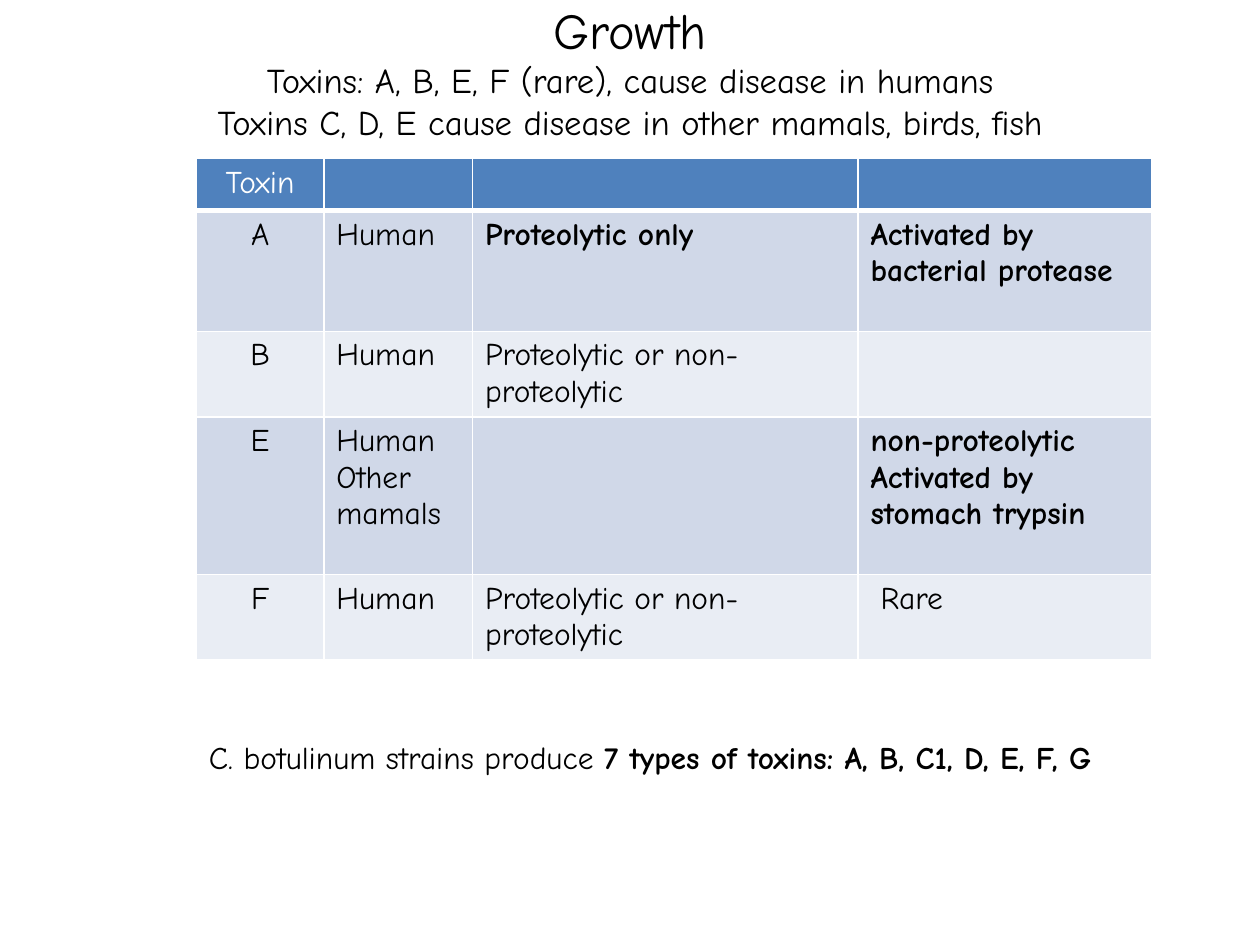
from lxml import etree
from pptx import Presentation
from pptx.dml.color import RGBColor
from pptx.enum import text
from pptx.oxml import ns
from pptx import util as u

FONT = "Comic Neue"
BLACK, WHITE = "000000", "FFFFFF"
HEADER, BAND_DARK, BAND_LIGHT = "4F81BD", "D0D8E8", "E9EDF4"


def color(hex_value):
    return RGBColor.from_string(hex_value)


class ToxinSlide:
    """Slide of 100 x 75 grid units, each a tenth of an inch."""

    def __init__(self, deck):
        self.slide = deck.slides.add_slide(deck.slide_layouts[5])

    def grid(self, *units):
        return [u.Inches(n / 10) for n in units]

    def run(self, paragraph, words, size=18, bold=False, ink=BLACK):
        run = paragraph.add_run()
        run.text = words
        run.font.name, run.font.size, run.font.bold = FONT, u.Pt(size), bold
        run.font.color.rgb = color(ink)

    def title(self, box, lines):
        title = self.slide.shapes.title
        title.left, title.top, title.width, title.height = self.grid(*box)
        frame = title.text_frame
        frame.auto_size = text.MSO_AUTO_SIZE.NONE
        frame.vertical_anchor = text.MSO_ANCHOR.MIDDLE
        frame.margin_bottom = u.Inches(0.38)
        paragraph = frame.paragraphs[0]
        paragraph.alignment = text.PP_ALIGN.CENTER
        for i, (words, size) in enumerate(lines):
            if i:
                paragraph.add_line_break()
            self.run(paragraph, words, size)

    def note(self, box, parts):
        frame = self.slide.shapes.add_textbox(*self.grid(*box)).text_frame
        frame.word_wrap = True
        for words, bold in parts:
            self.run(frame.paragraphs[0], words, bold=bold)

    def borders(self, cell, bottom):
        props = cell._tc.get_or_add_tcPr()
        sides = (("lnL", 1), ("lnR", 1), ("lnT", 1), ("lnB", bottom))
        for i, (side, points) in enumerate(sides):
            line = etree.Element(ns.qn(f"a:{side}"), w=str(u.Pt(points)))
            fill = etree.SubElement(line, ns.qn("a:solidFill"))
            etree.SubElement(fill, ns.qn("a:srgbClr"), val=WHITE)
            props.insert(i, line)

    def table(self, corner, widths, heights, rows):
        box = self.grid(*corner, sum(widths), sum(heights))
        table = self.slide.shapes.add_table(len(rows), len(widths), *box).table
        for column, width in zip(table.columns, self.grid(*widths)):
            column.width = width
        for row, height in zip(table.rows, self.grid(*heights)):
            row.height = height
        for r, row in enumerate(rows):
            fill = (BAND_DARK if r % 2 else BAND_LIGHT) if r else HEADER
            for c, words in enumerate(row):
                cell = table.cell(r, c)
                cell.fill.solid()
                cell.fill.fore_color.rgb = color(fill)
                self.borders(cell, 1 if r else 3)
                self.cell_text(cell, words, c == 0, BLACK if r else WHITE)
        return table

    def cell_text(self, cell, words, centred, ink):
        frame = cell.text_frame
        bold = words.startswith("*")
        for i, line in enumerate(words.lstrip("*").split("\n")):
            paragraph = frame.add_paragraph() if i else frame.paragraphs[0]
            if centred:
                paragraph.alignment = text.PP_ALIGN.CENTER
            if line:
                self.run(paragraph, line, bold=bold, ink=ink)
            else:
                paragraph.font.size = u.Pt(18)


def main():
    deck = Presentation()
    deck.slide_width, deck.slide_height = u.Inches(10), u.Inches(7.5)
    page = ToxinSlide(deck)

    # Heading with its two summary lines
    page.title((5, 3, 90, 8.5), [
        ("Growth", 28.8),
        ("Toxins: A, B, E, F (rare), cause disease in humans", 19.8),
        ("Toxins C, D, E cause disease in other mamals, birds, fish", 19.8),
    ])

    # Toxin table; a leading asterisk marks a bold cell
    either = "Proteolytic or non-proteolytic"
    toxins = page.table(
        (15.6, 12.6), (10.1, 11.8, 30.6, 23.3), (4.1, 9.6, 6.8, 12.5, 6.8), [
            ("Toxin", "", "", ""),
            ("A", "Human", "*Proteolytic only",
             "*Activated by bacterial protease"),
            ("B", "Human", either, ""),
            ("E", "Human\nOther mamals", "",
             "*non-proteolytic\nActivated by stomach trypsin"),
            ("F", "Human", either, "Rare"),
        ])
    toxins.cell(4, 3).margin_left = u.Inches(0.18)

    # Closing remark
    page.note((15.6, 58.1, 83.6, 4), [
        ("C. botulinum strains produce ", False),
        ("7 types of toxins: A, B, C1, D, E, F, G", True),
    ])

    deck.save("out.pptx")


if __name__ == "__main__":
    main()
